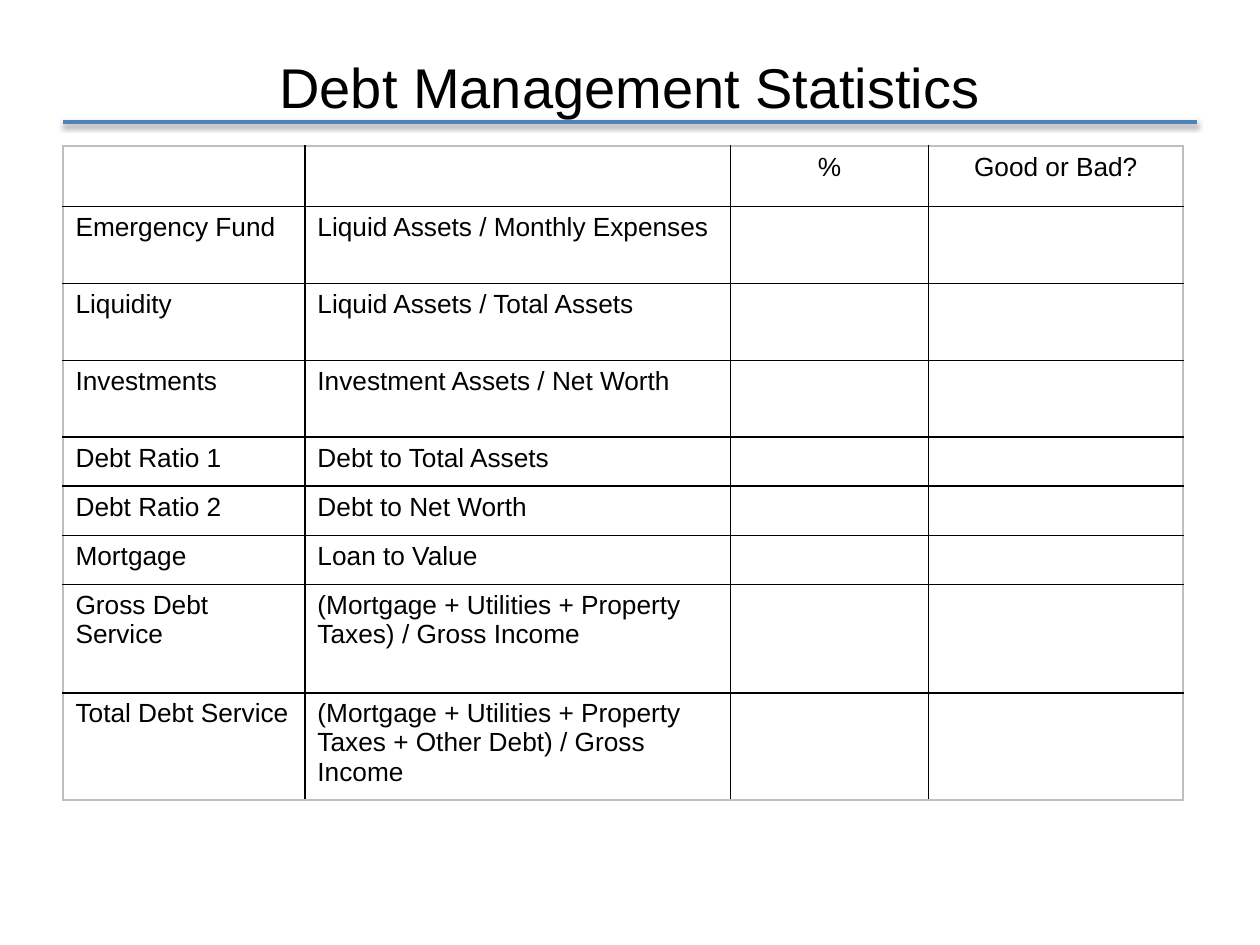
from lxml.etree import SubElement as Sub
from pptx import Presentation
from pptx.dml.color import RGBColor
from pptx.enum.shapes import MSO_CONNECTOR as Conn
from pptx.enum.text import MSO_ANCHOR as Anchor, PP_ALIGN as Align
from pptx.oxml.ns import qn
from pptx.util import Inches, Pt

BLACK = RGBColor(0, 0, 0)
WHITE = RGBColor(255, 255, 255)
GREY = RGBColor(0xBF, 0xBF, 0xBF)
BLUE = RGBColor(0x4F, 0x81, 0xBD)
FONT = "Arial"

TITLE = "Debt Management Statistics"
ROWS = [
    (0.48, "", "", "%", "Good or Bad?"),
    (0.61, "Emergency Fund", "Liquid Assets / Monthly Expenses", "", ""),
    (0.61, "Liquidity", "Liquid Assets / Total Assets", "", ""),
    (0.61, "Investments", "Investment Assets / Net Worth", "", ""),
    (0.39, "Debt Ratio 1", "Debt to Total Assets", "", ""),
    (0.39, "Debt Ratio 2", "Debt to Net Worth", "", ""),
    (0.39, "Mortgage", "Loan to Value", "", ""),
    (0.86, "Gross Debt Service",
     "(Mortgage + Utilities + Property Taxes) / Gross Income", "", ""),
    (0.77, "Total Debt Service",
     "(Mortgage + Utilities + Property Taxes + Other Debt) / Gross Income", "", ""),
]
COLS = [1.92, 3.38, 1.57, 2.02]


def write(frame, text, size, align):
    para = frame.paragraphs[0]
    para.alignment = align
    para.font.size = Pt(size)
    if text:
        run = para.add_run()
        run.text = text
        run.font.name = FONT
        run.font.size = Pt(size)
        run.font.color.rgb = BLACK


def border(cell, sides):
    props = cell._tc.get_or_add_tcPr()
    for i, (side, color) in enumerate(sides):
        line = Sub(props, qn("a:" + side), w=str(Pt(1)))
        fill = Sub(line, qn("a:solidFill"))
        Sub(fill, qn("a:srgbClr"), val=str(color))
        props.insert(i, line)


def add_title(slide):
    box = slide.shapes.add_textbox(Inches(0.5), Inches(0.3), Inches(9), Inches(0.76))
    frame = box.text_frame
    frame.word_wrap = True
    frame.vertical_anchor = Anchor.MIDDLE
    write(frame, TITLE, 32, Align.CENTER)


def add_grid(slide):
    high = sum(row[0] for row in ROWS)
    grid = slide.shapes.add_table(
        len(ROWS), len(COLS), Inches(0.5), Inches(1.16),
        Inches(sum(COLS)), Inches(high)).table
    grid.first_row = grid.horz_banding = False
    for col, wide in zip(grid.columns, COLS):
        col.width = Inches(wide)
    for r, (tall, *texts) in enumerate(ROWS):
        grid.rows[r].height = Inches(tall)
        for c, text in enumerate(texts):
            cell = grid.cell(r, c)
            cell.fill.solid()
            cell.fill.fore_color.rgb = WHITE
            write(cell.text_frame, text, 15, Align.LEFT if r else Align.CENTER)
            edges = [("lnL", c == 0), ("lnR", c == len(COLS) - 1),
                     ("lnT", r == 0), ("lnB", r == len(ROWS) - 1)]
            border(cell, [(side, GREY if outer else BLACK) for side, outer in edges])


def add_rule(slide):
    rule = slide.shapes.add_connector(
        Conn.STRAIGHT, Inches(0.5), Inches(0.97), Inches(9.5), Inches(0.97))
    rule.line.color.rgb = BLUE
    rule.line.width = Pt(2)
    effect = Sub(rule._element.spPr, qn("a:effectLst"))
    shade = Sub(effect, qn("a:outerShdw"), blurRad=str(Pt(3.1)), dist=str(Pt(1.6)),
                dir="5400000", rotWithShape="0")
    tone = Sub(shade, qn("a:srgbClr"), val=str(BLACK))
    Sub(tone, qn("a:alpha"), val="38000")


def main():
    deck = Presentation()
    deck.slide_width, deck.slide_height = Inches(10), Inches(7.5)
    slide = deck.slides.add_slide(deck.slide_layouts[6])
    add_title(slide)
    add_grid(slide)
    add_rule(slide)
    deck.save("out.pptx")


if __name__ == "__main__":
    main()
